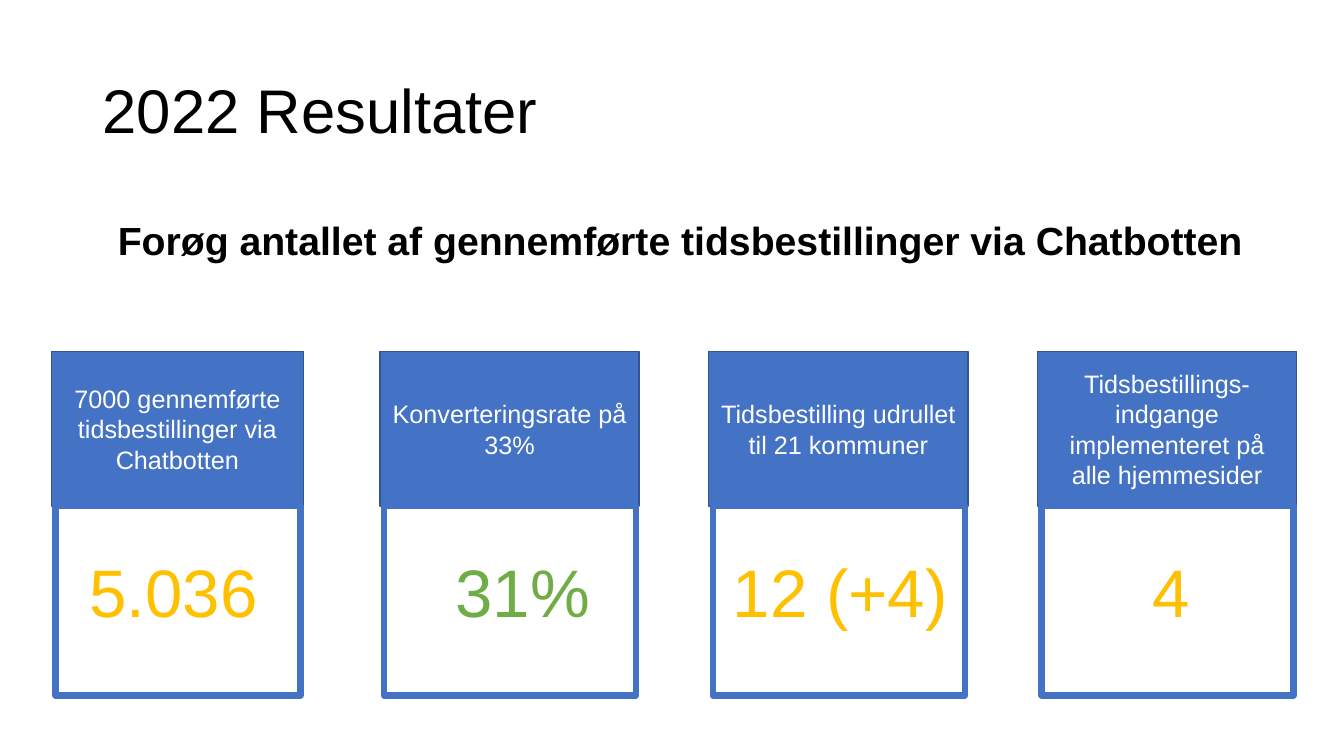
import dataclasses

import pptx
import pptx.dml.color
import pptx.enum.shapes
import pptx.enum.text
import pptx.util

PX = 9144
ANCHOR = pptx.enum.text.MSO_ANCHOR
ALIGN = pptx.enum.text.PP_ALIGN


@dataclasses.dataclass(frozen=True)
class Theme:
    font: str = "Arial"
    ink: str = "000000"
    light: str = "FFFFFF"
    blue: str = "4472C4"
    edge: str = "325491"
    amber: str = "FFC000"
    green: str = "70AD47"
    title_size: int = 44
    goal_size: int = 28
    result_size: int = 48
    target_size: int = 18
    thin: float = 1
    thick: float = 4.5


class SlideBuilder:
    def __init__(self, slide, theme):
        self.slide = slide
        self.theme = theme

    def set_words(self, shape, words, size, color, bold=False, anchor=ANCHOR.TOP,
                  align=ALIGN.LEFT, spacing=1.0):
        frame = shape.text_frame
        frame.word_wrap = True
        frame.vertical_anchor = anchor
        paragraph = frame.paragraphs[0]
        paragraph.alignment = align
        paragraph.line_spacing = spacing
        run = paragraph.add_run()
        run.text = words
        style = {"name": self.theme.font, "size": pptx.util.Pt(size), "bold": bold}
        for key, value in style.items():
            setattr(run.font, key, value)
        run.font.color.rgb = pptx.dml.color.RGBColor.from_string(color)

    def text(self, box, words, size, color, **layout):
        shape = self.slide.shapes.add_textbox(*(n * PX for n in box))
        self.set_words(shape, words, size, color, **layout)

    def rectangle(self, box, line, weight, fill=None):
        shape = self.slide.shapes.add_shape(
            pptx.enum.shapes.MSO_SHAPE.RECTANGLE, *(n * PX for n in box))
        shape.shadow.inherit = False
        if fill:
            shape.fill.solid()
            shape.fill.fore_color.rgb = pptx.dml.color.RGBColor.from_string(fill)
        else:
            shape.fill.background()
        shape.line.color.rgb = pptx.dml.color.RGBColor.from_string(line)
        shape.line.width = pptx.util.Pt(weight)
        return shape

    def card(self, left, width, target, result, color, inset, result_width):
        theme = self.theme
        header = self.rectangle((left, 349, width, 153), theme.edge, theme.thin, theme.blue)
        self.set_words(header, target, theme.target_size, theme.light,
                       anchor=ANCHOR.MIDDLE, align=ALIGN.CENTER)
        self.rectangle((left + 4, 502, width - 7, 188), theme.blue, theme.thick)
        self.text((left + inset, 541, result_width, 91), result, theme.result_size, color)


def main():
    theme = Theme()
    deck = pptx.Presentation()
    deck.slide_width = pptx.util.Inches(13.33)
    deck.slide_height = pptx.util.Inches(7.5)
    builder = SlideBuilder(deck.slides.add_slide(deck.slide_layouts[6]), theme)

    builder.text((92, 40, 1150, 145), "2022 Resultater", theme.title_size, theme.ink,
                 anchor=ANCHOR.MIDDLE, spacing=0.9)
    builder.text((107, 210, 1251, 57),
                 "Forøg antallet af gennemførte tidsbestillinger via Chatbotten",
                 theme.goal_size, theme.ink, bold=True)

    goals = [
        (250, "7000 gennemførte tidsbestillinger via Chatbotten", "5.036", theme.amber, 28, 189),
        (257, "Konverteringsrate på 33%", "31%", theme.green, 65, 158),
        (257, "Tidsbestilling udrullet til 21 kommuner", "12 (+4)", theme.amber, 14, 257),
        (257, "Tidsbestillings-indgange implementeret på alle hjemmesider", "4",
         theme.amber, 104, 90),
    ]
    for column, goal in enumerate(goals):
        builder.card(51 + 326 * column, *goal)

    deck.save("out.pptx")


if __name__ == "__main__":
    main()
